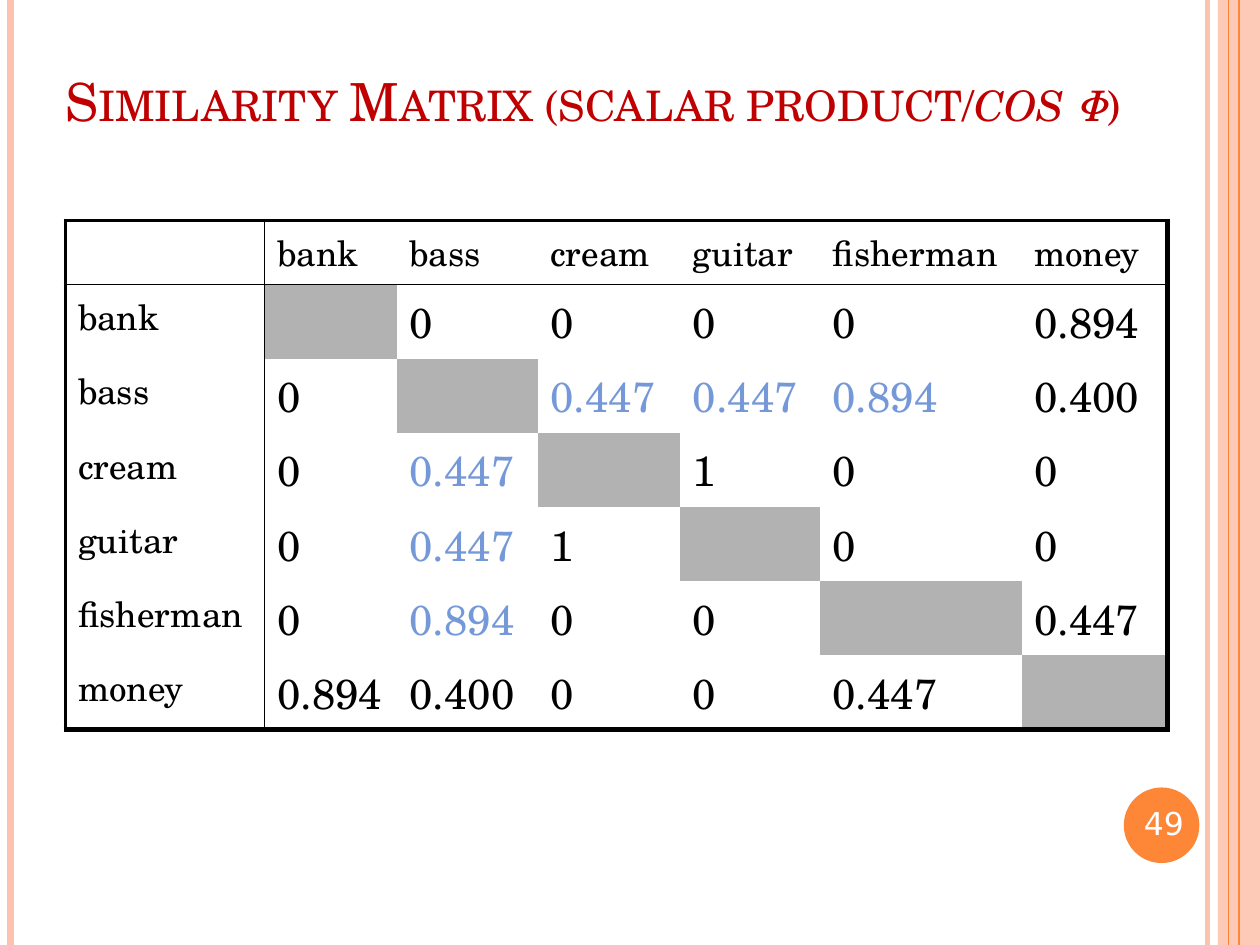
from lxml import etree
from pptx import Presentation
from pptx.dml.color import RGBColor
from pptx.enum.shapes import MSO_CONNECTOR, MSO_SHAPE
from pptx.enum.text import MSO_ANCHOR, MSO_AUTO_SIZE, PP_ALIGN
from pptx.oxml.ns import qn
from pptx.util import Pt

STRAIGHT = MSO_CONNECTOR.STRAIGHT
RECTANGLE, OVAL = MSO_SHAPE.RECTANGLE, MSO_SHAPE.OVAL
BOTTOM, MIDDLE = MSO_ANCHOR.BOTTOM, MSO_ANCHOR.MIDDLE
LEFT = PP_ALIGN.LEFT
NO_AUTOFIT = MSO_AUTO_SIZE.NONE

BLACK = RGBColor(0x00, 0x00, 0x00)
WHITE = RGBColor(0xFF, 0xFF, 0xFF)
RED = RGBColor(0xC0, 0x00, 0x00)
ORANGE = RGBColor(0xFE, 0x86, 0x37)
PEACH = RGBColor(0xFE, 0xC3, 0xAE)
GRAY = RGBColor(0xB2, 0xB2, 0xB2)
BLUE = RGBColor(0x75, 0x98, 0xD9)

SERIF, SANS = "TeX Gyre Schola", "DejaVu Sans"
PLAIN_TABLE_STYLE = "{2D5ABB26-0587-4C30-8999-92F81FD0307C}"
SLIDE_WIDTH, SLIDE_HEIGHT = 720, 540


def add_run(paragraph, text, font_name, size, color):
    run = paragraph.add_run()
    run.text = text
    run.font.name = font_name
    run.font.size = Pt(size)
    run.font.color.rgb = color
    return run


def set_border(cell, side, width):
    line = etree.SubElement(cell._tc.get_or_add_tcPr(), qn(f"a:ln{side}"), w=str(Pt(width)))
    if width:
        fill = etree.SubElement(line, qn("a:solidFill"))
        etree.SubElement(fill, qn("a:srgbClr"), val=str(BLACK))
    else:
        etree.SubElement(line, qn("a:noFill"))


prs = Presentation()
prs.slide_width, prs.slide_height = Pt(SLIDE_WIDTH), Pt(SLIDE_HEIGHT)
slide = prs.slides.add_slide(prs.slide_layouts[5])
shapes = slide.shapes

title = shapes.title
title.left, title.top, title.width, title.height = Pt(30), Pt(0), Pt(720), Pt(79.2)
title_frame = title.text_frame
title_frame.auto_size = NO_AUTOFIT
title_frame.vertical_anchor = BOTTOM
heading = title_frame.paragraphs[0]
heading.alignment = LEFT
for text, italic in [("Similarity Matrix (scalar product/", False), ("cos φ", True), (")", False)]:
    run = add_run(heading, text, SERIF, 30, RED)
    run.font.italic = italic
    run.font._element.set("cap", "small")

band = shapes.add_shape(RECTANGLE, Pt(696), Pt(0), Pt(24), Pt(SLIDE_HEIGHT))
band.shadow.inherit = False
band.fill.solid()
band.fill.fore_color.rgb = PEACH
band.line.fill.background()
band_color = band._element.spPr.find(f"{qn('a:solidFill')}/{qn('a:srgbClr')}")
etree.SubElement(band_color, qn("a:alpha"), val="87000")

for x, color, width in [(690, PEACH, 3), (6, PEACH, 4.5), (708, ORANGE, 1.5), (702, ORANGE, 0.75)]:
    stripe = shapes.add_connector(STRAIGHT, Pt(x), Pt(0), Pt(x), Pt(SLIDE_HEIGHT))
    stripe.line.color.rgb = color
    stripe.line.width = Pt(width)
    etree.SubElement(stripe._element.spPr, qn("a:effectLst"))

words = ["bank", "bass", "cream", "guitar", "fisherman", "money"]
similarities = [
    ["", "0", "0", "0", "0", "0.894"],
    ["0", "", "0.447", "0.447", "0.894", "0.400"],
    ["0", "0.447", "", "1", "0", "0"],
    ["0", "0.447", "1", "", "0", "0"],
    ["0", "0.894", "0", "0", "", "0.447"],
    ["0.894", "0.400", "0", "0", "0.447", ""],
]
grid = [["", *words]] + [[word, *values] for word, values in zip(words, similarities)]
column_widths = [113.8, 75.6, 80.6, 81.4, 79.9, 115.2, 83.5]
row_heights = [36.6] + [42.4] * len(words)
last = len(words)
bass = words.index("bass") + 1
fish_group = [words.index(word) + 1 for word in ("cream", "guitar", "fisherman")]

matrix = shapes.add_table(
    last + 1, last + 1, Pt(37.4), Pt(126), Pt(sum(column_widths)), Pt(sum(row_heights))
).table
matrix.first_row = matrix.horz_banding = False
matrix._tbl.tblPr.find(qn("a:tableStyleId")).text = PLAIN_TABLE_STYLE
for column, width in zip(matrix.columns, column_widths):
    column.width = Pt(width)
for row, height in zip(matrix.rows, row_heights):
    row.height = Pt(height)

for r, values in enumerate(grid):
    for c, text in enumerate(values):
        cell = matrix.cell(r, c)
        set_border(cell, "L", {0: 2.25, 1: 1}.get(c, 0))
        set_border(cell, "R", {0: 1, last: 3}.get(c, 0))
        set_border(cell, "T", {0: 2.25, 1: 1}.get(r, 0))
        set_border(cell, "B", {0: 1, last: 3}.get(r, 0))
        if r == c and r > 0:
            cell.fill.solid()
            cell.fill.fore_color.rgb = GRAY
        else:
            cell.fill.background()
        if text:
            size = 20 if r == 0 or c == 0 else 24
            related = (r == bass and c in fish_group) or (c == bass and r in fish_group)
            entry = cell.text_frame.paragraphs[0]
            entry.space_before = Pt(round(size * 0.24, 1))
            add_run(entry, text, SERIF, size, BLUE if related else BLACK)

badge = shapes.add_shape(OVAL, Pt(642.2), Pt(450), Pt(43.2), Pt(43.2))
badge.shadow.inherit = False
badge.fill.solid()
badge.fill.fore_color.rgb = ORANGE
badge.line.fill.background()

page_number = shapes.add_textbox(Pt(648), Pt(450), Pt(39), Pt(40.3)).text_frame
page_number.word_wrap = True
page_number.vertical_anchor = MIDDLE
page_number.margin_left = page_number.margin_right = Pt(0)
page_number.margin_top = page_number.margin_bottom = Pt(0)
add_run(page_number.paragraphs[0], " 49", SANS, 18, WHITE)

prs.save("out.pptx")
